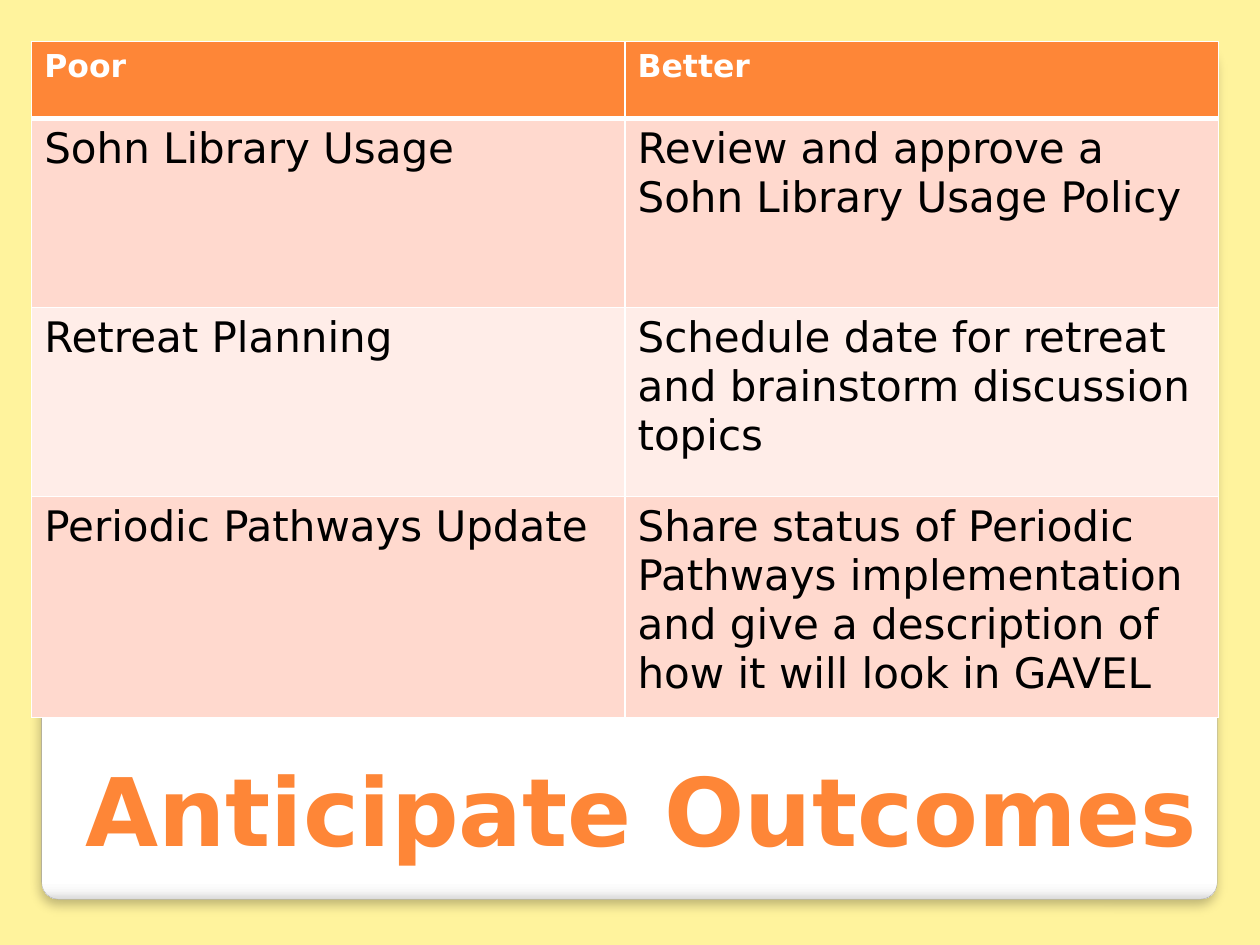
from copy import deepcopy
from dataclasses import dataclass

from lxml.etree import SubElement
from pptx import Presentation
from pptx.dml.color import RGBColor
from pptx.enum.shapes import MSO_SHAPE
from pptx.enum.text import MSO_AUTO_SIZE
from pptx.oxml.ns import qn
from pptx.util import Cm, Pt


@dataclass(frozen=True)
class Theme:
    font: str = "DejaVu Sans"
    background: str = "FFF39D"
    accent: str = "FE8637"
    white: str = "FFFFFF"
    black: str = "000000"
    band_dark: str = "FFD9CE"
    band_light: str = "FFEDE8"
    panel_edge: str = "A4A4A4"
    panel_stops: tuple = ((0, "FFFFFF"), (0.98, "FFFFFF"), (0.99, "F7F7F7"), (1, "DADADA"))
    title_size: int = 54
    body_size: int = 24
    header_size: int = 18
    grid_width: int = 1
    header_rule_width: int = 3


def rgb(color):
    return RGBColor.from_string(color)


def write(frame, text, *, font, size, color, bold=False):
    run = frame.paragraphs[0].add_run()
    run.text = text
    run.font.name = font
    run.font.size = Pt(size)
    run.font.bold = bold
    run.font.color.rgb = rgb(color)


def add_solid_color(parent, color):
    fill = SubElement(parent, qn("a:solidFill"))
    return SubElement(fill, qn("a:srgbClr"), val=color)


class SlideBuilder:
    def __init__(self, slide, theme):
        self.slide = slide
        self.theme = theme
        slide.background.fill.solid()
        slide.background.fill.fore_color.rgb = rgb(theme.background)

    def panel(self, left, top, width, height):
        """Add the rounded white card with a shaded lower edge and soft shadow."""
        card = self.slide.shapes.add_shape(
            MSO_SHAPE.ROUNDED_RECTANGLE, Cm(left), Cm(top), Cm(width), Cm(height))
        card.adjustments[0] = 0.02
        card.line.color.rgb = rgb(self.theme.panel_edge)
        card.line.width = Pt(0.16)

        card.fill.gradient()
        card.fill.gradient_angle = 270
        properties = card._element.spPr
        stop_list = properties.find(qn("a:gradFill")).find(qn("a:gsLst"))
        while len(stop_list) < len(self.theme.panel_stops):
            stop_list.append(deepcopy(stop_list[-1]))
        for stop, (position, color) in zip(card.fill.gradient_stops, self.theme.panel_stops):
            stop.position = position
            stop.color.rgb = rgb(color)

        card.shadow.inherit = False
        shadow = SubElement(
            properties.find(qn("a:effectLst")), qn("a:outerShdw"),
            blurRad=str(Pt(6)), dist=str(Pt(4)), dir="5400000", rotWithShape="0")
        shadow_color = SubElement(shadow, qn("a:srgbClr"), val=self.theme.black)
        SubElement(shadow_color, qn("a:alpha"), val="25000")

    def cell_borders(self, cell, **widths):
        for side in ("L", "R", "T", "B"):
            width = widths.get(side, self.theme.grid_width)
            border = SubElement(
                cell._tc.get_or_add_tcPr(), qn(f"a:ln{side}"), w=str(Pt(width)))
            add_solid_color(border, self.theme.white)

    def table(self, rows, left, top, column_width, row_heights):
        theme = self.theme
        columns = len(rows[0])
        grid = self.slide.shapes.add_table(
            len(rows), columns, Cm(left), Cm(top),
            Cm(column_width * columns), Cm(sum(row_heights))).table
        for column in grid.columns:
            column.width = Cm(column_width)
        for index, (row, height) in enumerate(zip(rows, row_heights)):
            grid.rows[index].height = Cm(height)
            is_header = index == 0
            if is_header:
                fill, rules = theme.accent, {"B": theme.header_rule_width}
                style = dict(size=theme.header_size, color=theme.white, bold=True)
            else:
                fill = theme.band_dark if index % 2 else theme.band_light
                rules = {"T": theme.header_rule_width} if index == 1 else {}
                style = dict(size=theme.body_size, color=theme.black)
            for position, text in enumerate(row):
                cell = grid.cell(index, position)
                self.cell_borders(cell, **rules)
                cell.fill.solid()
                cell.fill.fore_color.rgb = rgb(fill)
                write(cell.text_frame, text, font=theme.font, **style)

    def title(self, text, left, top, width, height):
        frame = self.slide.shapes.add_textbox(
            Cm(left), Cm(top), Cm(width), Cm(height)).text_frame
        frame.word_wrap = False
        frame.auto_size = MSO_AUTO_SIZE.SHAPE_TO_FIT_TEXT
        write(frame, text, font=self.theme.font, size=self.theme.title_size,
              color=self.theme.accent, bold=True)


OUTCOMES = [
    ("Poor", "Better"),
    ("Sohn Library Usage", "Review and approve a Sohn Library Usage Policy"),
    ("Retreat Planning", "Schedule date for retreat and brainstorm discussion topics"),
    ("Periodic Pathways Update",
     "Share status of Periodic Pathways implementation and give a description of "
     "how it will look in GAVEL"),
]


def main():
    presentation = Presentation()
    presentation.slide_width = Cm(25.4)
    presentation.slide_height = Cm(19.05)
    builder = SlideBuilder(
        presentation.slides.add_slide(presentation.slide_layouts[6]), Theme())
    builder.panel(0.84, 0.91, 23.7, 17.22)
    builder.table(OUTCOMES, 0.64, 0.84, column_width=11.96,
                  row_heights=[1.55, 3.81, 3.81, 4.45])
    builder.title("Anticipate Outcomes", 1.47, 15.04, 22.94, 2.57)
    presentation.save("out.pptx")


if __name__ == "__main__":
    main()
